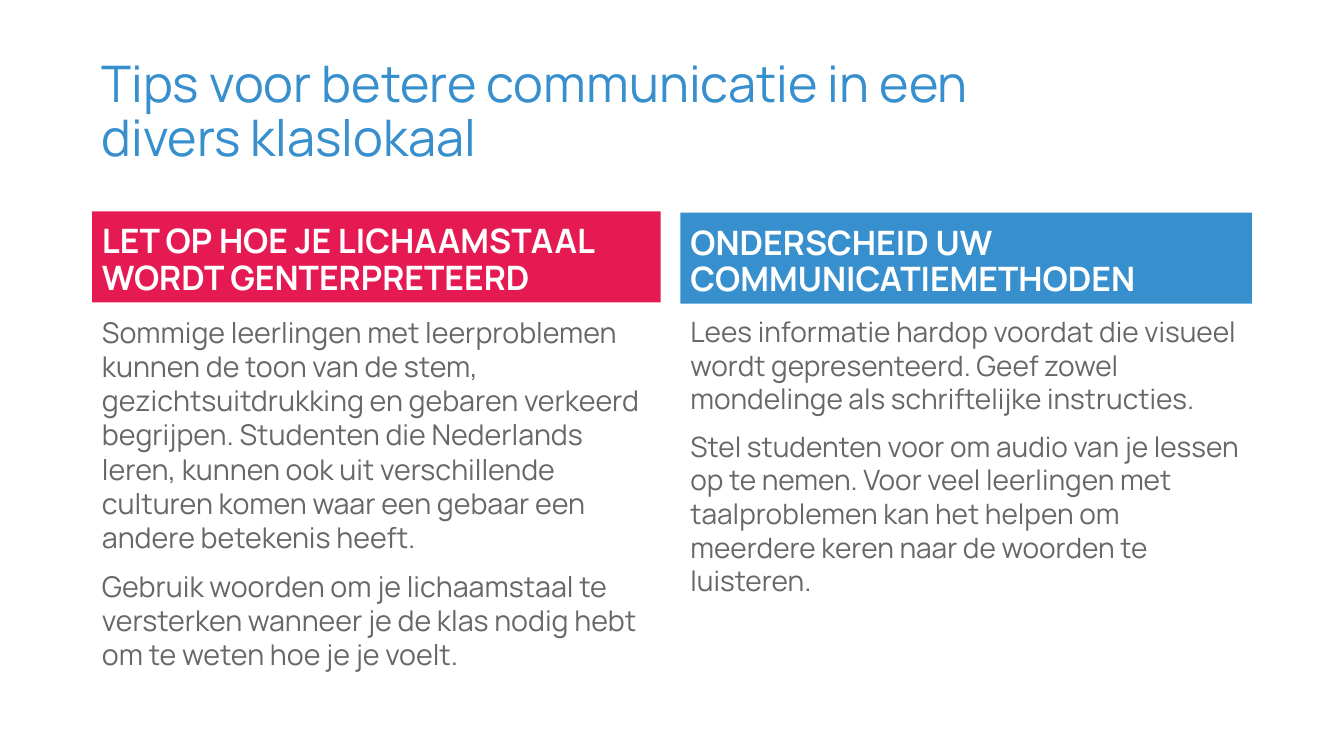
from pptx import Presentation
from pptx.dml.color import RGBColor
from pptx.enum.shapes import MSO_SHAPE
from pptx.enum.text import MSO_ANCHOR, PP_ALIGN
from pptx.util import Cm, Pt

RECT = MSO_SHAPE.RECTANGLE
TOP, MIDDLE, BOTTOM = MSO_ANCHOR.TOP, MSO_ANCHOR.MIDDLE, MSO_ANCHOR.BOTTOM
LEFT = PP_ALIGN.LEFT

THEME = {
    "font": "Manrope",
    "blue": RGBColor(0x37, 0x8F, 0xCD),
    "red": RGBColor(0xE6, 0x1A, 0x52),
    "gray": RGBColor(0x67, 0x67, 0x66),
    "white": RGBColor(0xFF, 0xFF, 0xFF),
    "title": Pt(36),
    "head": Pt(24),
    "gap": Pt(10),
}


def write(shape, lines, anchor, color, size, bold=False, pitch=1.0):
    frame = shape.text_frame
    frame.word_wrap = True
    frame.vertical_anchor = anchor
    frame.text = "\n".join(lines)
    look = {"name": THEME["font"], "size": size, "bold": bold}
    for i, par in enumerate(frame.paragraphs):
        par.alignment = LEFT
        par.line_spacing = pitch
        if i:
            par.space_before = THEME["gap"]
        for key, value in look.items():
            setattr(par.font, key, value)
        par.font.color.rgb = color


deck = Presentation()
deck.slide_width, deck.slide_height = Cm(33.87), Cm(19.05)
slide = deck.slides.add_slide(deck.slide_layouts[6])
shapes = slide.shapes

title = shapes.add_textbox(Cm(2.31), Cm(1.02), Cm(23.77), Cm(3.68))
write(title, ["Tips voor betere communicatie in een divers klaslokaal"],
      MIDDLE, THEME["blue"], THEME["title"], pitch=0.9)

columns = [
    {
        "left": 2.32, "top": 5.33, "width": 14.33, "fill": "red", "size": 20.4,
        "head": "LET OP HOE JE LICHAAMSTAAL WORDT GENTERPRETEERD",
        "body": [
            "Sommige leerlingen met leerproblemen kunnen de toon van de stem, "
            "gezichtsuitdrukking en gebaren verkeerd begrijpen. Studenten die "
            "Nederlands leren, kunnen ook uit verschillende culturen komen "
            "waar een gebaar een andere betekenis heeft.",
            "Gebruik woorden om je lichaamstaal te versterken wanneer je de "
            "klas nodig hebt om te weten hoe je je voelt.",
        ],
    },
    {
        "left": 17.15, "top": 5.36, "width": 14.4, "fill": "blue", "size": 20,
        "head": "ONDERSCHEID UW COMMUNICATIEMETHODEN",
        "body": [
            "Lees informatie hardop voordat die visueel wordt gepresenteerd. "
            "Geef zowel mondelinge als schriftelijke instructies.",
            "Stel studenten voor om audio van je lessen op te nemen. Voor "
            "veel leerlingen met taalproblemen kan het helpen om meerdere "
            "keren naar de woorden te luisteren.",
        ],
    },
]

for col in columns:
    left, width = Cm(col["left"]), Cm(col["width"])
    head = shapes.add_shape(RECT, left, Cm(col["top"]), width, Cm(2.29))
    head.shadow.inherit = False
    head.fill.solid()
    head.fill.fore_color.rgb = THEME[col["fill"]]
    head.line.fill.background()
    write(head, [col["head"]], BOTTOM, THEME["white"], THEME["head"],
          bold=True, pitch=0.9)
    body = shapes.add_textbox(left, Cm(7.8), width, Cm(10.24))
    write(body, col["body"], TOP, THEME["gray"], Pt(col["size"]))

deck.save("out.pptx")
